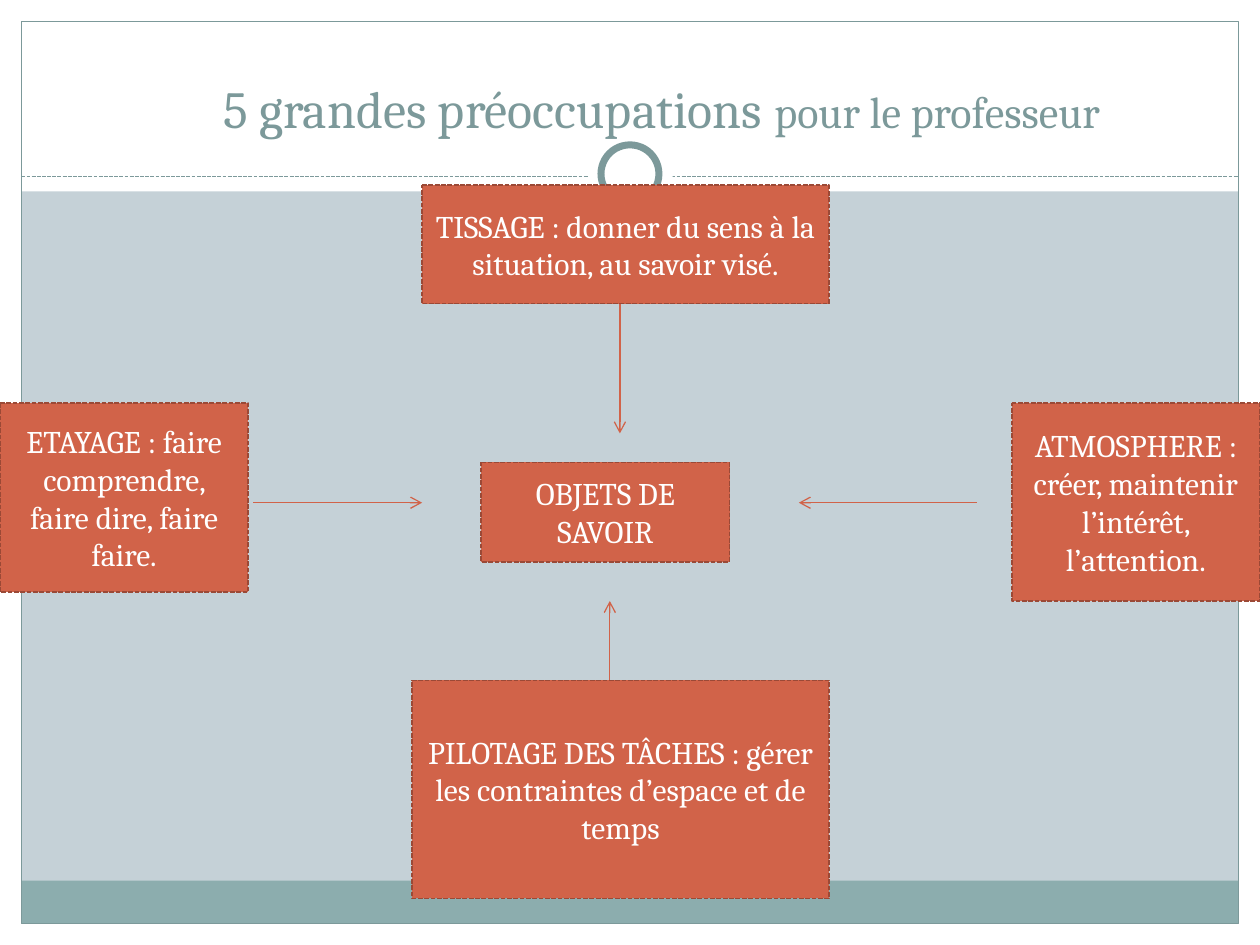
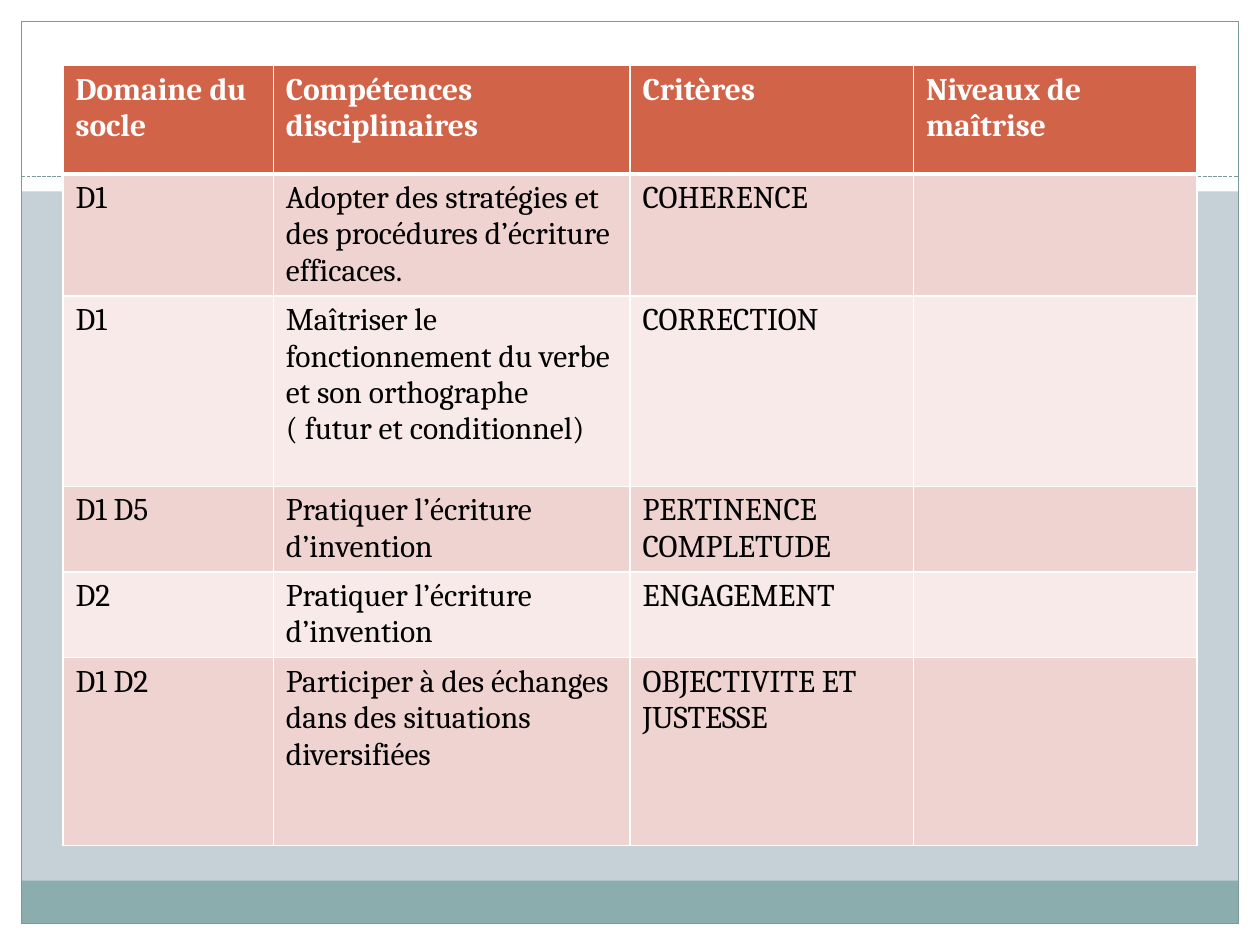
from lxml.etree import SubElement
from pptx import Presentation
from pptx.dml.color import RGBColor
from pptx.enum.dml import MSO_LINE
from pptx.enum.shapes import MSO_CONNECTOR, MSO_SHAPE
from pptx.enum.text import MSO_ANCHOR, MSO_AUTO_SIZE, PP_ALIGN
from pptx.oxml.ns import qn
from pptx.util import Inches, Pt

WHITE = RGBColor(0xFF, 0xFF, 0xFF)
BLACK = RGBColor(0, 0, 0)
MIST = RGBColor(0xC5, 0xD1, 0xD7)
TEAL = RGBColor(0x8C, 0xAD, 0xAE)
DARK_TEAL = RGBColor(0x7C, 0x99, 0x9A)
BRICK = RGBColor(0xD1, 0x63, 0x49)
DARK_BRICK = RGBColor(0x9B, 0x49, 0x36)
ROSE = RGBColor(0xEE, 0xD3, 0xD0)
PALE_ROSE = RGBColor(0xF7, 0xEA, 0xE9)

FONT = "Cambria"
WIDTH, HEIGHT, MARGIN = 10, 7.5, 0.17
TITLE_ONLY, BLANK = 5, 6

# Concern boxes: text and (left, top, width, height)
CONCERNS = [
    ("TISSAGE : donner du sens à la situation, au savoir visé.", (3.35, 1.47, 3.23, 0.94)),
    ("ETAYAGE : faire comprendre, faire dire, faire faire.", (0, 3.2, 1.97, 1.5)),
    ("ATMOSPHERE : créer, maintenir l’intérêt, l’attention.", (8.03, 3.2, 1.97, 1.57)),
    ("PILOTAGE DES TÂCHES : gérer les contraintes d’espace et de temps",
     (3.27, 5.4, 3.31, 1.73)),
    ("OBJETS DE SAVOIR", (3.82, 3.67, 1.97, 0.79)),
]
# Arrows pointing to the centre: start and end
ARROWS = [
    ((2.01, 3.99), (3.35, 3.99)),
    ((7.75, 3.99), (6.34, 3.99)),
    ((4.84, 6.19), (4.84, 4.77)),
    ((4.92, 2.41), (4.92, 3.44)),
]

SKILLS = [
    ("Domaine du socle", "Compétences disciplinaires", "Critères", "Niveaux de maîtrise"),
    ("D1", "Adopter des stratégies et des procédures d’écriture efficaces.", "COHERENCE", ""),
    ("D1", "Maîtriser le fonctionnement du verbe et son orthographe ( futur et conditionnel)",
     "CORRECTION", ""),
    ("D1 D5", "Pratiquer l’écriture d’invention", "PERTINENCE COMPLETUDE", ""),
    ("D2", "Pratiquer l’écriture d’invention", "ENGAGEMENT", ""),
    ("D1 D2", "Participer à des échanges dans des situations diversifiées",
     "OBJECTIVITE ET JUSTESSE", ""),
]
COLUMN_WIDTHS = [1.67, 2.83, 2.25, 2.25]
ROW_HEIGHTS = [0.86, 0.97, 1.51, 0.68, 0.68, 1.49]


def apply(target, values):
    for name, value in values.items():
        setattr(target, name, value)


def add_run(paragraph, text, size, color, bold=False):
    run = paragraph.add_run()
    run.text = text
    apply(run.font, {"name": FONT, "size": Pt(size), "bold": bold})
    run.font.color.rgb = color


def set_line(line, color, width, dash=None):
    line.color.rgb = color
    apply(line, {"width": Pt(width), "dash_style": dash})


def add_panel(slide, kind, box, fill=None, line=None):
    panel = slide.shapes.add_shape(kind, *map(Inches, box))
    panel.shadow.inherit = False
    if fill is None:
        panel.fill.background()
    else:
        panel.fill.solid()
        panel.fill.fore_color.rgb = fill
    if line is None:
        panel.line.fill.background()
    else:
        set_line(panel.line, *line)
    return panel


def add_segment(slide, start, end, color, dash=None):
    segment = slide.shapes.add_connector(
        MSO_CONNECTOR.STRAIGHT, *map(Inches, start + end))
    set_line(segment.line, color, 0.75, dash)
    SubElement(segment.element.spPr, qn("a:effectLst"))
    return segment


def build_master(prs):
    """Draw the shared frame once and place it behind everything on the master."""
    master = prs.slide_master
    master.background.fill.solid()
    master.background.fill.fore_color.rgb = MIST
    draft = prs.slides.add_slide(prs.slide_layouts[BLANK])
    inner = WIDTH - 2 * MARGIN
    rect, oval = MSO_SHAPE.RECTANGLE, MSO_SHAPE.OVAL
    # White margins and header band
    frame = [add_panel(draft, rect, box, WHITE) for box in (
        (0, HEIGHT - MARGIN, WIDTH, MARGIN),
        (0, 0, WIDTH, 1.52),
        (0, 0, MARGIN, HEIGHT),
        (WIDTH - MARGIN, 0, MARGIN, HEIGHT),
    )]
    # Footer band, outline, dashed rule and ring
    frame += [
        add_panel(draft, rect, (MARGIN, 6.99, inner, 0.34), TEAL),
        add_panel(draft, rect, (MARGIN, MARGIN, inner, HEIGHT - 2 * MARGIN),
                  line=(DARK_TEAL, 0.75)),
        add_segment(draft, (MARGIN, 1.4), (WIDTH - MARGIN, 1.4), DARK_TEAL,
                    MSO_LINE.SQUARE_DOT),
        add_panel(draft, oval, (4.67, 1.05, 0.67, 0.67), WHITE),
        add_panel(draft, oval, (4.77, 1.15, 0.46, 0.46), WHITE, (DARK_TEAL, 4)),
    ]
    tree = master.element.cSld.spTree
    for position, part in enumerate(frame, start=2):
        part.element.xpath(".//p:cNvPr")[0].set("id", str(100 + position))
        tree.insert(position, part.element)
    return draft


def add_title(slide, box, parts):
    title = slide.shapes.title
    apply(title, dict(zip(("left", "top", "width", "height"), map(Inches, box))))
    apply(title.text_frame, {"word_wrap": True, "auto_size": MSO_AUTO_SIZE.NONE,
                             "vertical_anchor": MSO_ANCHOR.BOTTOM})
    heading = title.text_frame.paragraphs[0]
    heading.alignment = PP_ALIGN.CENTER
    for text, size in parts:
        add_run(heading, text, size, DARK_TEAL)


def add_concern(slide, text, box):
    concern = add_panel(slide, MSO_SHAPE.FLOWCHART_PROCESS, box, BRICK,
                        (DARK_BRICK, 0.9, MSO_LINE.SQUARE_DOT))
    apply(concern.text_frame, {"word_wrap": True, "vertical_anchor": MSO_ANCHOR.MIDDLE})
    paragraph = concern.text_frame.paragraphs[0]
    paragraph.alignment = PP_ALIGN.CENTER
    add_run(paragraph, text, 18, WHITE)


def add_arrow(slide, start, end):
    arrow = add_segment(slide, start, end, BRICK)
    SubElement(arrow.element.spPr.find(qn("a:ln")), qn("a:tailEnd"), type="arrow")


def build_concerns(slide):
    add_title(slide, (1, 0.3, 8.5, 0.85),
              [("5 grandes préoccupations ", 29.7), ("pour le professeur", 25.2)])
    for start, end in ARROWS:
        add_arrow(slide, start, end)
    for text, box in CONCERNS:
        add_concern(slide, text, box)


def set_borders(cell, widths):
    properties = cell._tc.get_or_add_tcPr()
    for position, (side, width) in enumerate(widths.items()):
        border = properties.makeelement(qn(f"a:{side}"), {"w": str(Pt(width))})
        fill = SubElement(border, qn("a:solidFill"))
        SubElement(fill, qn("a:srgbClr"), val=str(WHITE))
        properties.insert(position, border)


def build_skills(slide, box):
    table = slide.shapes.add_table(
        len(SKILLS), len(COLUMN_WIDTHS), *map(Inches, box)).table
    for column, width in zip(table.columns, COLUMN_WIDTHS):
        column.width = Inches(width)
    for row, height in zip(table.rows, ROW_HEIGHTS):
        row.height = Inches(height)
    for r, texts in enumerate(SKILLS):
        header = r == 0
        fill = BRICK if header else (PALE_ROSE, ROSE)[r % 2]
        for c, text in enumerate(texts):
            cell = table.cell(r, c)
            cell.fill.solid()
            cell.fill.fore_color.rgb = fill
            set_borders(cell, {"lnL": 1, "lnR": 1, "lnT": 3 if r == 1 else 1,
                               "lnB": 3 if header else 1})
            if text:
                add_run(cell.text_frame.paragraphs[0], text, 18,
                        WHITE if header else BLACK, header)


def main():
    prs = Presentation()
    apply(prs, {"slide_width": Inches(WIDTH), "slide_height": Inches(HEIGHT)})
    skills = build_master(prs)
    build_concerns(prs.slides.add_slide(prs.slide_layouts[TITLE_ONLY]))
    build_skills(skills, (0.5, 0.52, sum(COLUMN_WIDTHS), sum(ROW_HEIGHTS)))
    # The table slide follows the diagram
    order = prs.slides.element if hasattr(prs.slides, "element") else prs.slides._sldIdLst
    order.append(order[0])
    prs.save("out.pptx")


if __name__ == "__main__":
    main()
